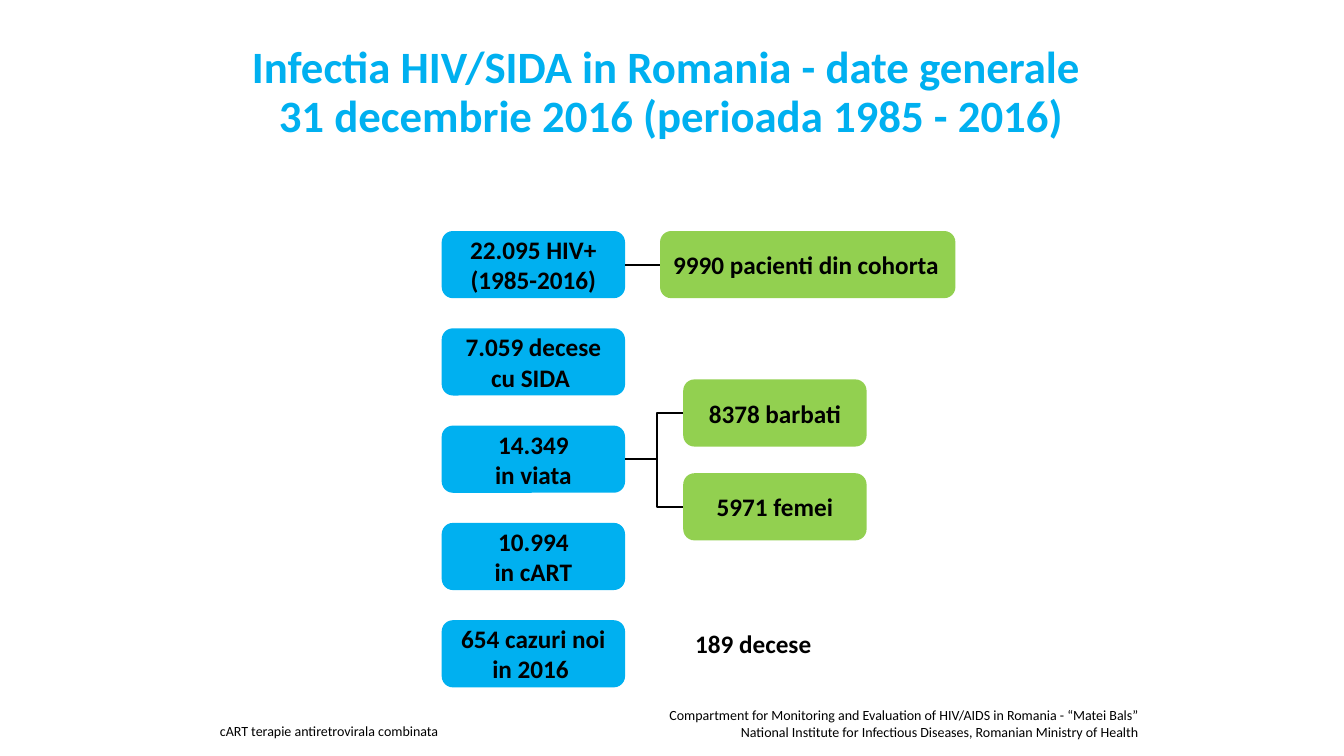
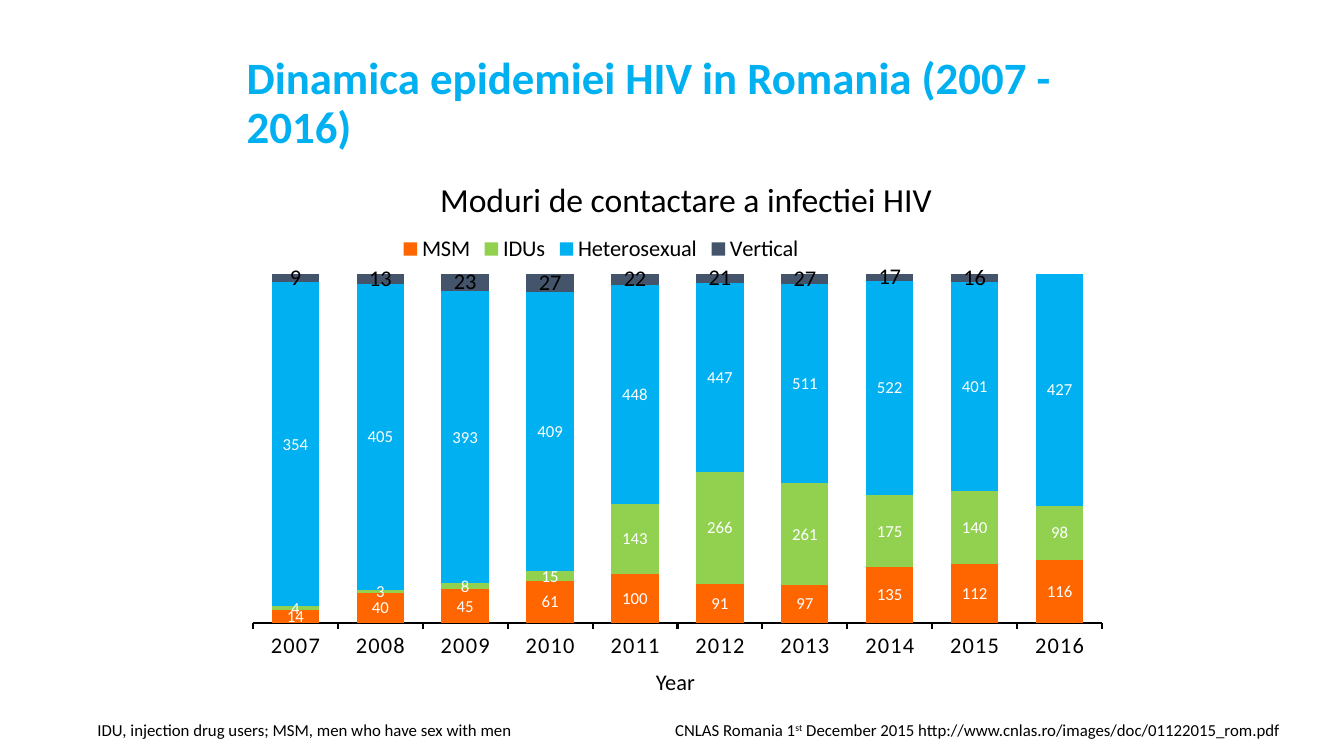
import typing

import lxml.etree
import pptx
import pptx.chart.data
import pptx.dml.color
import pptx.enum.chart
import pptx.enum.shapes
import pptx.enum.text
import pptx.oxml.ns
import pptx.util

Pt = pptx.util.Pt
Align = pptx.enum.text.PP_ALIGN
Anchor = pptx.enum.text.MSO_ANCHOR
Shapes = pptx.enum.shapes

FONT = "Calibri"
BLUE, GREEN, ORANGE, SLATE = "00B0F0", "92D050", "FF6600", "44546A"
BLACK, WHITE = "000000", "FFFFFF"

BOX_W, BOX_H = 131, 48
COLUMN_LEFT, COLUMN_TOP, COLUMN_PITCH = 315.5, 165, 69.5
BRANCH_X, SPLIT_LEFT = 469.5, 488
LINE_W = 1.5


class Rect(typing.NamedTuple):
    left: float
    top: float
    width: float
    height: float

    def lengths(self) -> list:
        return [Pt(v) for v in self]


class Label(typing.NamedTuple):
    """Free text; the part between two ^ marks is raised."""
    text: str
    rect: Rect
    size: float
    align: Align = Align.LEFT
    anchor: Anchor = Anchor.TOP
    bold: bool = False
    wrap: bool = True
    spacing: float = 1.0


class Box(typing.NamedTuple):
    text: str
    rect: Rect
    color: str
    align: Align = Align.CENTER


class Series(typing.NamedTuple):
    name: str
    values: tuple
    color: str
    label_size: float = 12
    label_color: str = WHITE


def rgb(color: str) -> pptx.dml.color.RGBColor:
    return pptx.dml.color.RGBColor.from_string(color)


def style_font(font, size: float, color: str = BLACK, bold: bool = False) -> None:
    font.name, font.size, font.bold = FONT, Pt(size), bold
    font.color.rgb = rgb(color)


def style_text(tf, size: float, align: Align, anchor: Anchor, color: str = BLACK,
               bold: bool = False, spacing: float = 1.0) -> None:
    tf.vertical_anchor = anchor
    for p in tf.paragraphs:
        p.alignment, p.line_spacing = align, spacing
        for r in p.runs:
            style_font(r.font, size, color, bold)


def add_titled_slide(prs, title: str, rect: Rect, align: Align):
    slide = prs.slides.add_slide(prs.slide_layouts[5])
    sp = slide.shapes.title
    sp.left, sp.top, sp.width, sp.height = rect.lengths()
    tf = sp.text_frame
    tf.text = title
    tf.word_wrap = True
    tf.auto_size = pptx.enum.text.MSO_AUTO_SIZE.NONE
    style_text(tf, 32, align, Anchor.MIDDLE, BLUE, True, 0.9)
    return slide


def add_label(slide, label: Label) -> None:
    tf = slide.shapes.add_textbox(*label.rect.lengths()).text_frame
    first, *rest = label.text.split("^")
    tf.text = first
    for part in rest:
        tf.paragraphs[0].add_run().text = part
    tf.word_wrap = label.wrap
    tf.auto_size = pptx.enum.text.MSO_AUTO_SIZE.SHAPE_TO_FIT_TEXT
    style_text(tf, label.size, label.align, label.anchor,
               bold=label.bold, spacing=label.spacing)
    for r in tf.paragraphs[0].runs[1::2]:
        r.font._element.set("baseline", "30000")


def add_box(slide, box: Box):
    sp = slide.shapes.add_shape(Shapes.MSO_SHAPE.ROUNDED_RECTANGLE, *box.rect.lengths())
    sp.shadow.inherit = False
    sp.fill.solid()
    sp.fill.fore_color.rgb = rgb(box.color)
    sp.line.fill.background()
    sp.text_frame.text = box.text
    sp.text_frame.word_wrap = True
    style_text(sp.text_frame, 18, box.align, Anchor.MIDDLE, bold=True)
    return sp


def style_line(line) -> None:
    line.color.rgb = rgb(BLACK)
    line.width = Pt(LINE_W)


def add_line_from(slide, source, end_x: float):
    """Draw a level line from the right side of a box."""
    y = source.top + source.height // 2
    line = slide.shapes.add_connector(Shapes.MSO_CONNECTOR.STRAIGHT,
                                      source.left + source.width, y, Pt(end_x), y)
    line.begin_connect(source, 3)
    style_line(line.line)
    lxml.etree.SubElement(line._element.spPr, pptx.oxml.ns.qn("a:effectLst"))
    return line


def add_bracket(slide, upper, lower) -> None:
    top, bottom = (sp.top + sp.height // 2 for sp in (upper, lower))
    builder = slide.shapes.build_freeform(upper.left, top)
    builder.add_line_segments([(Pt(BRANCH_X), top), (Pt(BRANCH_X), bottom),
                               (lower.left, bottom)], close=False)
    sp = builder.convert_to_shape()
    sp.shadow.inherit = False
    sp.fill.background()
    style_line(sp.line)


def manual_layout(**values) -> lxml.etree._Element:
    qn = pptx.oxml.ns.qn
    layout = lxml.etree.Element(qn("c:layout"))
    manual = lxml.etree.SubElement(layout, qn("c:manualLayout"))
    for tag, value in values.items():
        lxml.etree.SubElement(manual, qn(f"c:{tag}")).set("val", str(value))
    return layout


def place_chart_parts(chart) -> None:
    """Fix the inner plot area and the legend as fractions of the chart."""
    qn = pptx.oxml.ns.qn
    plot_area = chart._chartSpace.find(".//" + qn("c:plotArea"))
    legend = chart.legend._element
    for parent in (plot_area, legend):
        for old in parent.findall(qn("c:layout")):
            parent.remove(old)
    plot_area.insert(0, manual_layout(layoutTarget="inner", xMode="edge", yMode="edge",
                                      x=0.017, y=0.116, w=0.965, h=0.778))
    legend.find(qn("c:legendPos")).addnext(
        manual_layout(xMode="edge", yMode="edge", x=0.18, y=0.02))


def add_stacked_chart(slide, rect: Rect, categories: list, series: list) -> None:
    data = pptx.chart.data.CategoryChartData()
    data.categories = categories
    for item in series:
        data.add_series(item.name, item.values)
    chart = slide.shapes.add_chart(pptx.enum.chart.XL_CHART_TYPE.COLUMN_STACKED_100,
                                   *rect.lengths(), data).chart
    style_font(chart.font, 16)
    chart.has_title = False
    chart.has_legend = True
    chart.legend.position = pptx.enum.chart.XL_LEGEND_POSITION.TOP
    chart.legend.include_in_layout = False
    style_font(chart.legend.font, 16)

    plot = chart.plots[0]
    plot.vary_by_categories = False
    plot.gap_width, plot.overlap = 79, 100
    for item, drawn in zip(series, plot.series):
        drawn.format.fill.solid()
        drawn.format.fill.fore_color.rgb = rgb(item.color)
        labels = drawn.data_labels
        labels.show_value = True
        labels.position = pptx.enum.chart.XL_LABEL_POSITION.CENTER
        style_font(labels.font, item.label_size, item.label_color)

    chart.value_axis.visible = False
    chart.value_axis.has_major_gridlines = False
    chart.value_axis.major_unit = 0.2
    axis = chart.category_axis
    axis.major_tick_mark = pptx.enum.chart.XL_TICK_MARK.OUTSIDE
    style_line(axis.format.line)
    style_font(axis.tick_labels.font, 16)
    axis.tick_labels.font._element.set("spc", "100")
    place_chart_parts(chart)


def build_overview(prs) -> None:
    slide = add_titled_slide(
        prs, "Infectia HIV/SIDA in Romania - date generale \v31 decembrie 2016 (perioada 1985 - 2016)",
        Rect(65.5, 14.5, 828, 104.5), Align.CENTER)
    totals = ["22.095 HIV+\n(1985-2016)", "7.059 decese cu SIDA ", "14.349\nin viata",
              "10.994\nin cART", "654 cazuri noi in 2016 "]
    column = [add_box(slide, Box(text, Rect(COLUMN_LEFT, COLUMN_TOP + i * COLUMN_PITCH,
                                            BOX_W, BOX_H), BLUE))
              for i, text in enumerate(totals)]
    infected, alive = column[0], column[2]
    cohort = add_box(slide, Box("9990 pacienti din cohorta",
                                Rect(471.5, COLUMN_TOP, 211, BOX_H), GREEN, Align.LEFT))
    men, women = (add_box(slide, Box(text, Rect(SPLIT_LEFT, top, BOX_W, BOX_H), GREEN))
                  for text, top in (("8378 barbati", 271), ("5971 femei", 338)))
    add_line_from(slide, infected, 471.5).end_connect(cohort, 1)
    add_line_from(slide, alive, BRANCH_X)
    add_bracket(slide, men, women)
    for label in (
        Label("189 decese", Rect(489.5, 445, 98, 29), 18, bold=True, wrap=False),
        Label("cART terapie antiretrovirala combinata", Rect(150, 512.5, 379.5, 19.5), 10,
              anchor=Anchor.BOTTOM),
        Label("Compartment for Monitoring and Evaluation of HIV/AIDS in Romania - “Matei Bals” "
              "National Institute for Infectious Diseases, Romanian Ministry of Health",
              Rect(441.5, 500.5, 378.5, 31.5), 10, Align.RIGHT, Anchor.BOTTOM),
    ):
        add_label(slide, label)


def build_dynamics(prs) -> None:
    slide = add_titled_slide(prs, "Dinamica epidemiei HIV in Romania (2007 - 2016)",
                             Rect(169, 22.5, 651, 104.5), Align.LEFT)
    add_stacked_chart(
        slide, Rect(170, 158.5, 628.5, 320.5), [str(year) for year in range(2007, 2017)],
        [Series("MSM", (14, 40, 45, 61, 100, 91, 97, 135, 112, 116), ORANGE),
         Series("IDUs", (4, 3, 8, 15, 143, 266, 261, 175, 140, 98), GREEN),
         Series("Heterosexual", (354, 405, 393, 409, 448, 447, 511, 522, 401, 427), BLUE),
         Series("Vertical", (9, 13, 23, 27, 22, 21, 27, 17, 16, None), SLATE, 16, BLACK)])
    for label in (
        Label("Moduri de contactare a infectiei HIV", Rect(170, 124.5, 640, 32.5), 24,
              Align.CENTER),
        Label("Year", Rect(185, 474, 595, 26.5), 16, Align.CENTER),
        Label("IDU, injection drug users; MSM, men who have sex with men",
              Rect(62.5, 510.5, 375, 21.5), 12, anchor=Anchor.BOTTOM),
        Label("CNLAS Romania 1^st^ December 2015 http://www.cnlas.ro/images/doc/01122015_rom.pdf",
              Rect(391.5, 508.5, 530, 23.5), 12, Align.RIGHT, Anchor.BOTTOM, spacing=1.15),
    ):
        add_label(slide, label)


def main() -> None:
    prs = pptx.Presentation()
    prs.slide_width, prs.slide_height = Pt(960), Pt(540)
    build_overview(prs)
    build_dynamics(prs)
    prs.save("out.pptx")


if __name__ == "__main__":
    main()
